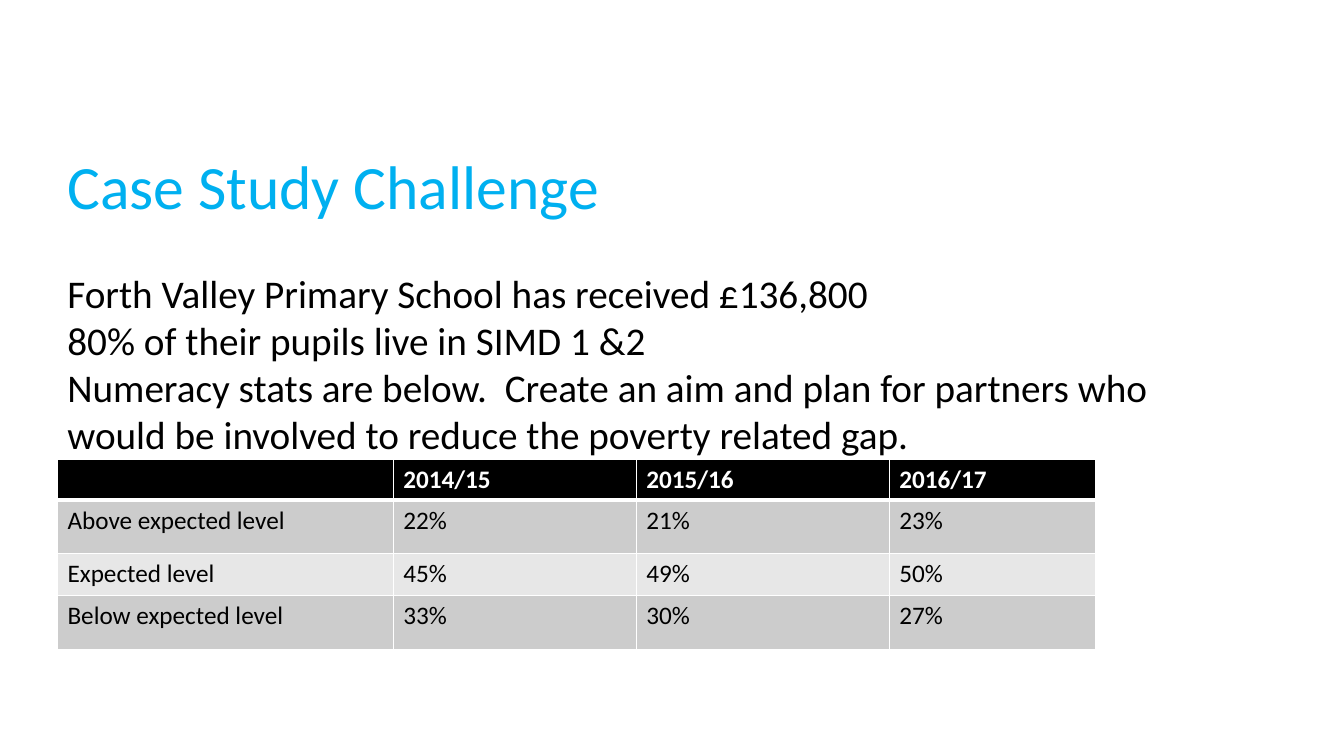
from lxml.etree import SubElement
from pptx import Presentation
from pptx.dml.color import RGBColor
from pptx.oxml.ns import qn
from pptx.util import Pt

PX = 9144  # 100 px to the inch
FONT = "Calibri"
BLACK, WHITE, BLUE = "000000", "FFFFFF", "00B0F0"
BANDS = "CCCCCC", "E7E7E7"

TITLE = "Case Study Challenge"
BRIEF = [
    "Forth Valley Primary School has received £136,800",
    "80% of their pupils live in SIMD 1 &2",
    "Numeracy stats are below.  Create an aim and plan for partners who "
    "would be involved to reduce the poverty related gap.",
]
STATS = [
    ["", "2014/15", "2015/16", "2016/17"],
    ["Above expected level", "22%", "21%", "23%"],
    ["Expected level", "45%", "49%", "50%"],
    ["Below expected level", "33%", "30%", "27%"],
]
COLS = [333, 241, 251, 205]
ROWS = [37, 53, 42, 53]


def color(code):
    return RGBColor.from_string(code)


def scale(*box):
    return [n * PX for n in box]


def style(font, size, code, bold=False):
    font.name, font.size, font.bold = FONT, Pt(size), bold
    font.color.rgb = color(code)


def write(para, text, size, code, bold=False):
    run = para.add_run()
    run.text = text
    style(run.font, size, code, bold)


def border(cell, **widths):
    """Draw white cell edges, with widths in points keyed by side."""
    props = cell._tc.get_or_add_tcPr()
    for side, width in widths.items():
        line = SubElement(props, qn(f"a:ln{side}"), w=str(Pt(width)))
        fill = SubElement(line, qn("a:solidFill"))
        SubElement(fill, qn("a:srgbClr"), val=WHITE)


def add_brief(slide, box):
    frame = slide.shapes.add_textbox(*scale(*box)).text_frame
    frame.word_wrap = True
    write(frame.paragraphs[0], TITLE, 44, BLUE)
    for i, text in enumerate(BRIEF):
        para = frame.add_paragraph()
        para.space_before = Pt(0 if i else 34)
        write(para, text, 28, BLACK)


def add_stats(slide, left, top):
    box = scale(left, top, sum(COLS), sum(ROWS))
    table = slide.shapes.add_table(len(ROWS), len(COLS), *box).table
    for col, width in zip(table.columns, COLS):
        col.width = width * PX
    for r, (row, high) in enumerate(zip(table.rows, ROWS)):
        row.height = high * PX
        head = r == 0
        for cell, text in zip(row.cells, STATS[r]):
            border(cell, L=1, R=1, T=3 if r == 1 else 1, B=3 if head else 1)
            cell.fill.solid()
            cell.fill.fore_color.rgb = color(BLACK if head else BANDS[(r - 1) % 2])
            para = cell.text_frame.paragraphs[0]
            if text:
                write(para, text, 18, WHITE if head else BLACK, head)
            else:
                style(para.font, 18, WHITE, True)


def main():
    deck = Presentation()
    deck.slide_width, deck.slide_height = scale(1333, 750)
    slide = deck.slides.add_slide(deck.slide_layouts[6])
    add_brief(slide, (57, 142, 1191, 414))
    add_stats(slide, 57, 456)
    deck.save("out.pptx")


if __name__ == "__main__":
    main()
